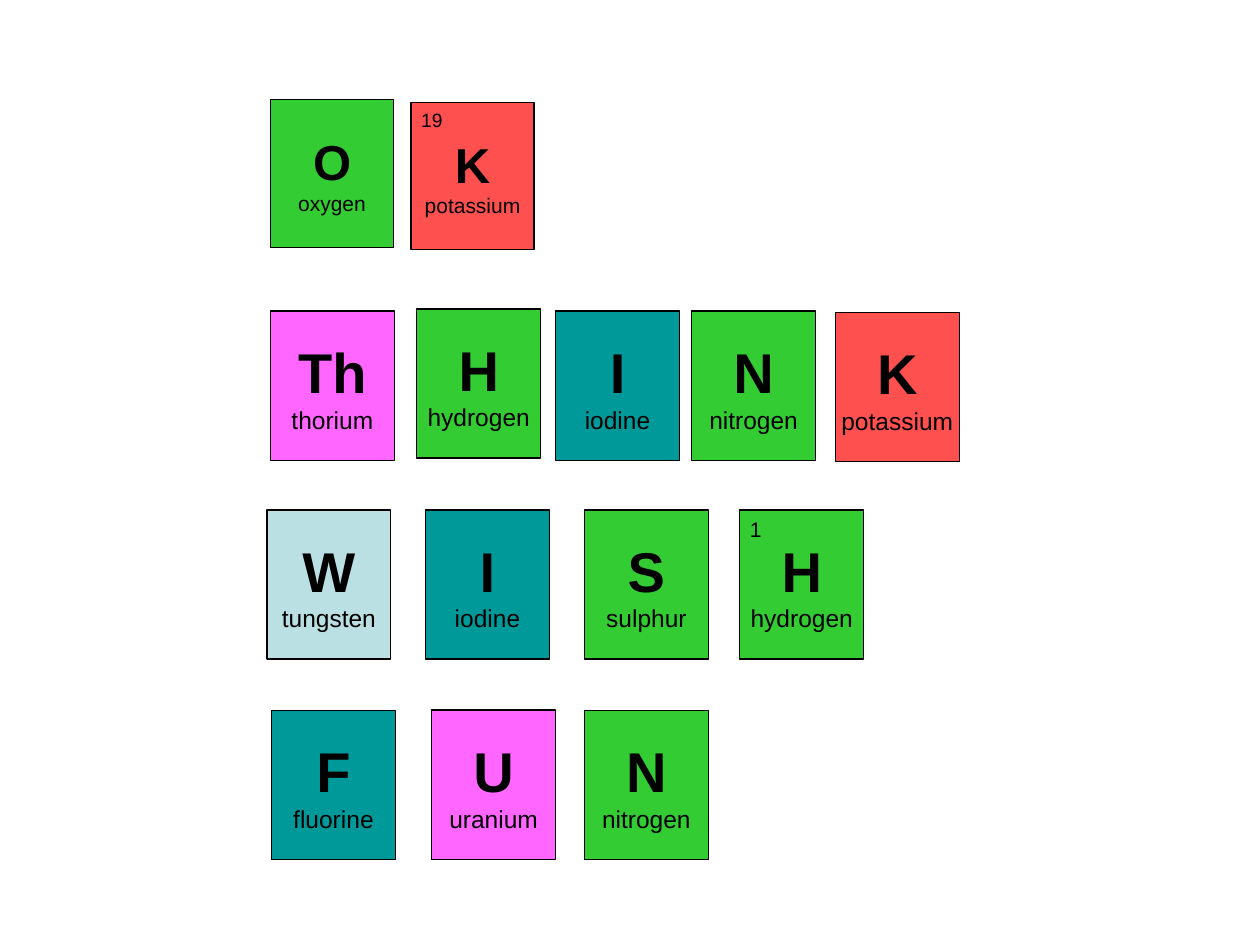
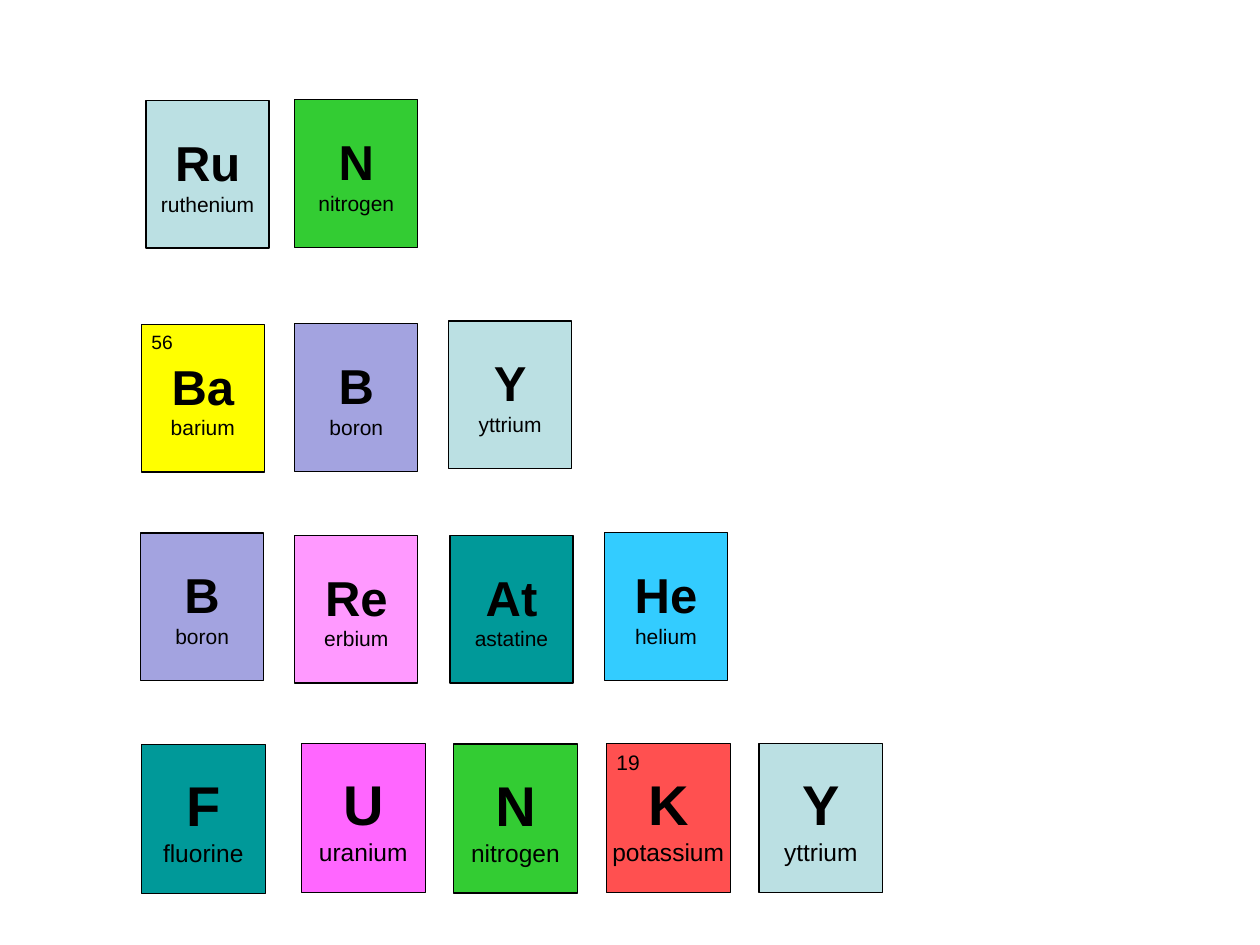
"""Build two slides of words spelled with chemical element tiles."""
from dataclasses import dataclass
from typing import Any

from pptx import Presentation
from pptx.dml.color import RGBColor
from pptx.enum.shapes import MSO_SHAPE
from pptx.enum.text import MSO_ANCHOR, MSO_AUTO_SIZE, PP_ALIGN
from pptx.util import Pt

RECT = MSO_SHAPE.RECTANGLE
MIDDLE, TOP = MSO_ANCHOR.MIDDLE, MSO_ANCHOR.TOP
CENTER, LEFT = PP_ALIGN.CENTER, PP_ALIGN.LEFT
GROW = MSO_AUTO_SIZE.SHAPE_TO_FIT_TEXT

FONT = "Arial"
BLACK, GREEN, RED, TEAL = "000000", "33CC33", "FF5050", "009999"
MAUVE, PINK, PALE = "FF66FF", "FF99FF", "BBE0E3"
LILAC, YELLOW, BLUE = "A3A3E0", "FFFF00", "33CCFF"
PAD_X, PAD_Y = 5.76, 3.6
FRAME = {"margin_left": Pt(PAD_X), "margin_right": Pt(PAD_X),
         "margin_top": Pt(PAD_Y), "margin_bottom": Pt(PAD_Y),
         "word_wrap": False}


@dataclass(frozen=True)
class Style:
    """Tile size and the text sizes used on it."""
    width: float
    height: float
    symbol: int
    name: int
    number: int


@dataclass(frozen=True)
class Tile:
    """One element tile with its place and optional atomic number."""
    symbol: str
    left: float
    top: float
    number: str = ""


@dataclass(frozen=True)
class Word:
    """A row of tiles that share one style."""
    style: Style
    tiles: tuple[Tile, ...]


SMALL = Style(70.3, 84.4, 28, 12, 11)
LARGE = Style(70.8, 85.2, 32, 14, 12)

ELEMENTS = {
    "O": ("oxygen", GREEN), "H": ("hydrogen", GREEN),
    "N": ("nitrogen", GREEN), "S": ("sulphur", GREEN),
    "K": ("potassium", RED), "Ba": ("barium", YELLOW),
    "I": ("iodine", TEAL), "F": ("fluorine", TEAL),
    "At": ("astatine", TEAL), "Th": ("thorium", MAUVE),
    "U": ("uranium", MAUVE), "Re": ("erbium", PINK),
    "W": ("tungsten", PALE), "Ru": ("ruthenium", PALE),
    "Y": ("yttrium", PALE), "B": ("boron", LILAC),
    "He": ("helium", BLUE),
}

SLIDES = (
    (
        Word(SMALL, (Tile("O", 154.6, 56.9), Tile("K", 234.9, 58.4, "19"))),
        Word(LARGE, (Tile("Th", 154.6, 177.8), Tile("H", 238.2, 176.6),
                     Tile("I", 317.5, 177.8), Tile("N", 395.3, 177.8),
                     Tile("K", 477.4, 178.5))),
        Word(LARGE, (Tile("W", 152.6, 291.4), Tile("I", 243.2, 291.4),
                     Tile("S", 334, 291.4), Tile("H", 422.8, 291.4, "1"))),
        Word(LARGE, (Tile("F", 155.2, 406.1), Tile("U", 246.7, 405.8),
                     Tile("N", 334, 406.1))),
    ),
    (
        Word(SMALL, (Tile("Ru", 83.5, 57.4), Tile("N", 168.5, 56.9))),
        Word(SMALL, (Tile("Ba", 80.8, 185.3, "56"), Tile("B", 168.5, 184.9),
                     Tile("Y", 256.4, 183.5))),
        Word(SMALL, (Tile("B", 80.4, 304.5), Tile("Re", 168.5, 305.9),
                     Tile("At", 257.2, 305.9), Tile("He", 345.4, 304.4))),
        Word(LARGE, (Tile("F", 80.8, 425.4), Tile("U", 172.2, 425),
                     Tile("N", 259.2, 425.2), Tile("K", 346.5, 425, "19"),
                     Tile("Y", 433.7, 425))),
    ),
)


def color(code: str) -> RGBColor:
    """Turn a hex string into a colour."""
    return RGBColor.from_string(code)


def apply(target: Any, values: dict[str, Any]) -> None:
    """Set each attribute of the target from a dict."""
    for key, value in values.items():
        setattr(target, key, value)


def write(para: Any, text: str, size: int, bold: bool, align: Any) -> None:
    """Write one run of formatted text into a paragraph."""
    para.alignment = align
    run = para.add_run()
    run.text = text
    apply(run.font, {"name": FONT, "size": Pt(size), "bold": bold})
    run.font.color.rgb = color(BLACK)


def draw_box(shapes: Any, tile: Tile, style: Style) -> None:
    """Draw the coloured box with its symbol and name."""
    name, shade = ELEMENTS[tile.symbol]
    box = shapes.add_shape(RECT, Pt(tile.left), Pt(tile.top),
                           Pt(style.width), Pt(style.height))
    box.shadow.inherit = False
    box.fill.solid()
    box.fill.fore_color.rgb = color(shade)
    box.line.color.rgb = color(BLACK)
    box.line.width = Pt(0.75)
    frame = box.text_frame
    apply(frame, FRAME | {"vertical_anchor": MIDDLE})
    write(frame.paragraphs[0], tile.symbol, style.symbol, True, CENTER)
    write(frame.add_paragraph(), name, style.name, False, CENTER)


def draw_number(shapes: Any, tile: Tile, size: int) -> None:
    """Put the atomic number in the top left corner."""
    width = 2 * PAD_X + 0.56 * size * len(tile.number)
    height = 2 * PAD_Y + 1.2 * size
    box = shapes.add_textbox(Pt(tile.left), Pt(tile.top),
                             Pt(width), Pt(height))
    frame = box.text_frame
    apply(frame, FRAME | {"vertical_anchor": TOP, "auto_size": GROW})
    write(frame.paragraphs[0], tile.number, size, False, LEFT)


def draw_tile(slide: Any, tile: Tile, style: Style) -> None:
    """Draw a tile, grouped with its number if it has one."""
    if tile.number:
        shapes = slide.shapes.add_group_shape().shapes
        draw_box(shapes, tile, style)
        draw_number(shapes, tile, style.number)
    else:
        draw_box(slide.shapes, tile, style)


def main() -> None:
    """Build and save the deck."""
    deck = Presentation()
    apply(deck, {"slide_width": Pt(720), "slide_height": Pt(540)})
    blank = deck.slide_layouts[6]
    for words in SLIDES:
        slide = deck.slides.add_slide(blank)
        for word in words:
            for tile in word.tiles:
                draw_tile(slide, tile, word.style)
    deck.save("out.pptx")


if __name__ == "__main__":
    main()
